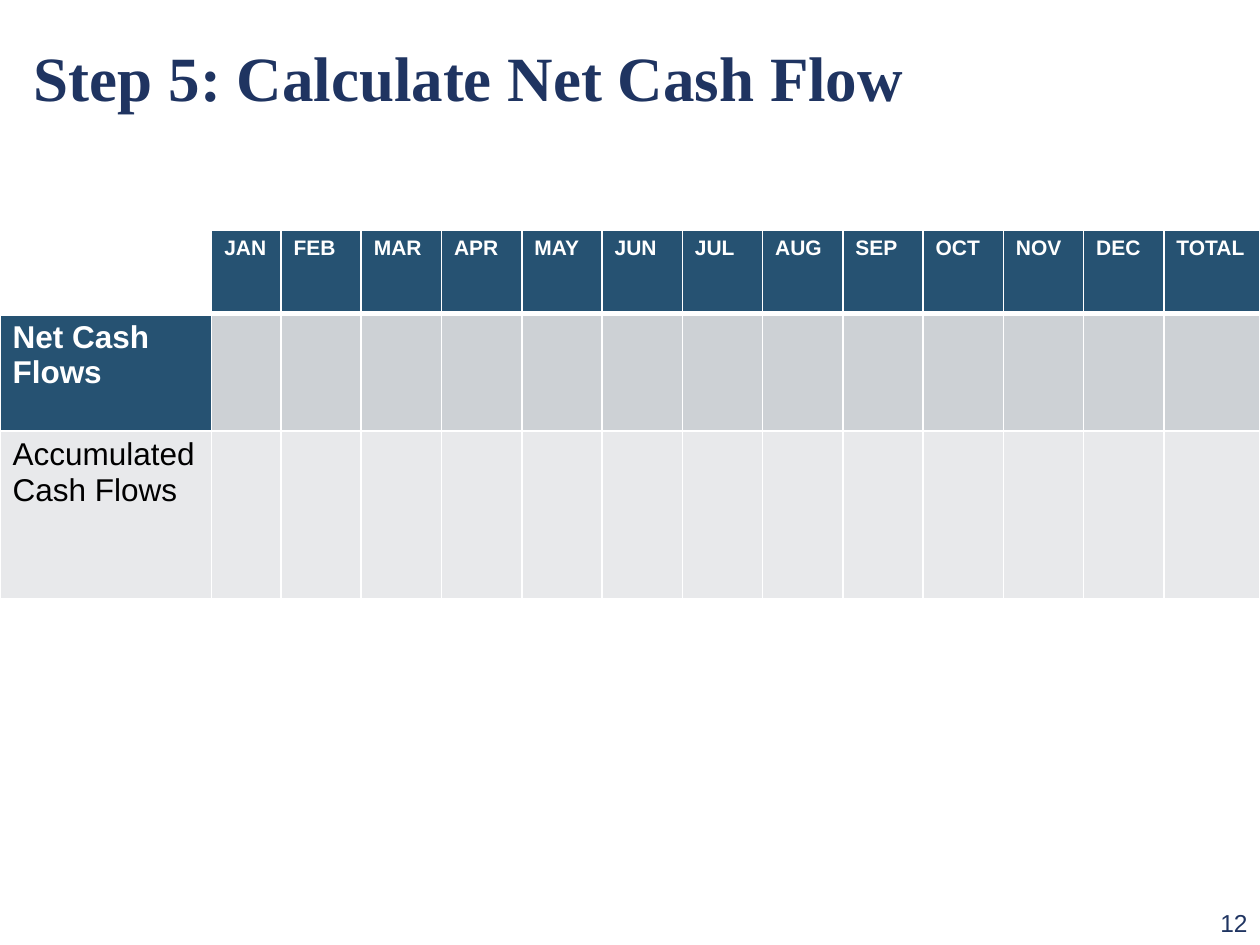
from dataclasses import dataclass

import lxml.etree
import pptx
import pptx.dml.color
import pptx.enum.text
import pptx.oxml.ns
import pptx.util
from pptx.util import Inches

COLORS = {
    "navy": "1F3461",
    "header": "265272",
    "net": "CDD1D5",
    "accumulated": "E8E9EB",
    "white": "FFFFFF",
    "black": "000000",
}
MONTHS = ["JAN", "FEB", "MAR", "APR", "MAY", "JUN",
          "JUL", "AUG", "SEP", "OCT", "NOV", "DEC"]
TABLE_WIDTH = 10
LABEL_WIDTH, JANUARY_WIDTH, TOTAL_WIDTH = 1.68, 0.55, 0.76
MONTH_WIDTH = (TABLE_WIDTH - LABEL_WIDTH - JANUARY_WIDTH - TOTAL_WIDTH) / (len(MONTHS) - 1)
COLUMN_WIDTHS = [LABEL_WIDTH, JANUARY_WIDTH] + [MONTH_WIDTH] * (len(MONTHS) - 1) + [TOTAL_WIDTH]


@dataclass
class TableRow:
    texts: list[str]
    height: float
    label_fill: str
    value_fill: str
    size: int
    text_color: str = "white"
    bold: bool = True
    bottom_border: int = 1


ROWS = [
    TableRow(["", *MONTHS, "TOTAL"], 0.66, "white", "header", 12, bottom_border=3),
    TableRow(["Net Cash Flows"], 0.93, "header", "net", 18),
    TableRow(["Accumulated Cash Flows"], 1.33, "accumulated", "accumulated", 18,
             text_color="black", bold=False),
]


def rgb(color: str) -> pptx.dml.color.RGBColor:
    return pptx.dml.color.RGBColor.from_string(COLORS[color])


def style_font(font, name: str, size: int, color: str, bold: bool = False) -> None:
    font.name = name
    font.size = pptx.util.Pt(size)
    font.bold = bold
    font.color.rgb = rgb(color)


def add_text(slide, text: str, left: float, top: float, width: float, height: float,
             alignment, anchor):
    """Add a one-line text box and return its paragraph."""
    box = slide.shapes.add_textbox(Inches(left), Inches(top), Inches(width), Inches(height))
    frame = box.text_frame
    frame.word_wrap = True
    frame.vertical_anchor = anchor
    paragraph = frame.paragraphs[0]
    paragraph.text = text
    paragraph.alignment = alignment
    return paragraph


def add_border(cell, side: str, width: int) -> None:
    qn = pptx.oxml.ns.qn
    properties = cell._tc.get_or_add_tcPr()
    line = lxml.etree.SubElement(properties, qn(f"a:ln{side}"), w=str(pptx.util.Pt(width)))
    fill = lxml.etree.SubElement(line, qn("a:solidFill"))
    lxml.etree.SubElement(fill, qn("a:srgbClr"), val=COLORS["white"])


def fill_row(table, row_index: int, row: TableRow) -> None:
    table.rows[row_index].height = Inches(row.height)
    top_border = ROWS[row_index - 1].bottom_border if row_index else 1
    borders = {"L": 1, "R": 1, "T": top_border, "B": row.bottom_border}
    for column_index in range(len(COLUMN_WIDTHS)):
        cell = table.cell(row_index, column_index)
        for side, width in borders.items():
            add_border(cell, side, width)
        cell.fill.solid()
        cell.fill.fore_color.rgb = rgb(row.value_fill if column_index else row.label_fill)
        paragraph = cell.text_frame.paragraphs[0]
        if column_index < len(row.texts):
            paragraph.text = row.texts[column_index]
        style_font(paragraph.font, "Arial", row.size, row.text_color, row.bold)


def add_cash_flow_table(slide) -> None:
    height = sum(row.height for row in ROWS)
    table = slide.shapes.add_table(len(ROWS), len(COLUMN_WIDTHS), Inches(0), Inches(1.83),
                                   Inches(TABLE_WIDTH), Inches(height)).table
    table.horz_banding = False
    table.first_col = True
    for column, width in zip(table.columns, COLUMN_WIDTHS):
        column.width = Inches(width)
    for row_index, row in enumerate(ROWS):
        fill_row(table, row_index, row)


def main() -> None:
    presentation = pptx.Presentation()
    presentation.slide_width = Inches(10)
    presentation.slide_height = Inches(7.5)
    slide = presentation.slides.add_slide(presentation.slide_layouts[6])

    align, anchor = pptx.enum.text.PP_ALIGN, pptx.enum.text.MSO_ANCHOR
    page_number = add_text(slide, "12", 9.42, 7.16, 0.58, 0.34, align.RIGHT, anchor.TOP)
    style_font(page_number.font, "Arial", 14, "navy")
    title = add_text(slide, "Step 5: Calculate Net Cash Flow", 0.17, 0.17, 8.75, 0.87,
                     align.LEFT, anchor.MIDDLE)
    style_font(title.font, "Times New Roman", 36, "navy", bold=True)
    add_cash_flow_table(slide)
    presentation.save("out.pptx")


if __name__ == "__main__":
    main()
